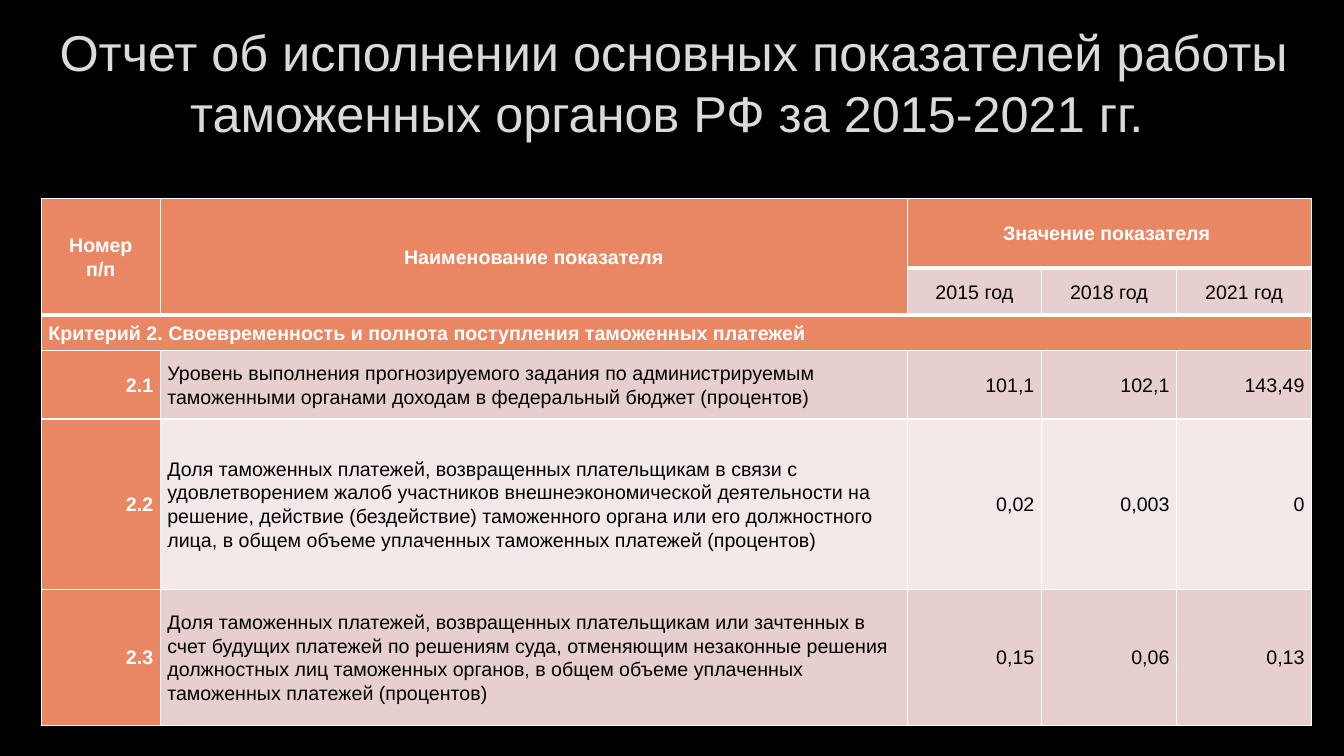
from lxml.etree import SubElement
from pptx import Presentation
from pptx.dml.color import RGBColor
from pptx.enum.text import MSO_ANCHOR as Anchor, MSO_AUTO_SIZE as AutoSize, PP_ALIGN as Align
from pptx.oxml import parse_xml
from pptx.oxml.ns import qn
from pptx.util import Inches, Pt

TITLE = "Отчет об исполнении основных показателей работы таможенных органов РФ за 2015-2021 гг. "
ROWS = [
    ["Номер\nп/п", "Наименование показателя", "Значение показателя ", "", ""],
    ["", "", "2015 год", "2018 год", "2021 год"],
    ["Критерий 2. Своевременность и полнота поступления таможенных платежей", "", "", "", ""],
    ["2.1", "Уровень выполнения прогнозируемого задания по администрируемым таможенными "
     "органами доходам в федеральный бюджет (процентов)", "101,1", "102,1", "143,49"],
    ["2.2", "Доля таможенных платежей, возвращенных плательщикам в связи с удовлетворением жалоб "
     "участников внешнеэкономической деятельности на решение, действие (бездействие) таможенного "
     "органа или его должностного лица, в общем объеме уплаченных таможенных платежей (процентов)",
     "0,02", "0,003", "0"],
    ["2.3", "Доля таможенных платежей, возвращенных плательщикам или зачтенных в счет будущих "
     "платежей по решениям суда, отменяющим незаконные решения должностных лиц таможенных органов, "
     "в общем объеме уплаченных таможенных платежей (процентов)", "0,15", "0,06", "0,13"],
]
MERGES = [((0, 0), (1, 0)), ((0, 1), (1, 1)), ((0, 2), (0, 4)), ((2, 0), (2, 4))]
COLUMN_WIDTHS = [1.18, 7.41, 1.33, 1.34, 1.34]
ROW_HEIGHTS = [0.69, 0.36, 0.35, 0.68, 1.69, 1.35]
HEADER_ROWS = 2
CRITERION_ROW = 2
FONT = "Arial"
ACCENT, DARK_BAND, LIGHT_BAND = "E98764", "E7CFCD", "F3E9E8"
WHITE, BLACK = "FFFFFF", "000000"


def paint(fill, color):
    fill.solid()
    fill.fore_color.rgb = RGBColor.from_string(color)


def format_font(font, size, color, bold=False):
    font.name, font.size, font.bold = FONT, Pt(size), bold
    paint(font.fill, color)


def outline_text(run):
    run.font.fill
    run._r.get_or_add_rPr().insert(0, parse_xml(
        '<a:ln xmlns:a="http://schemas.openxmlformats.org/drawingml/2006/main" w="9525">'
        '<a:solidFill><a:srgbClr val="404040"><a:alpha val="10000"/></a:srgbClr></a:solidFill></a:ln>'))


def add_borders(cell, row):
    properties = cell._tc.get_or_add_tcPr()
    widths = {"lnL": 1, "lnR": 1,
              "lnT": 3 if 0 < row <= HEADER_ROWS else 1,
              "lnB": 3 if row < HEADER_ROWS else 1}
    for position, (edge, width) in enumerate(widths.items()):
        line = SubElement(properties, qn("a:" + edge), w=str(Pt(width)))
        fill = SubElement(line, qn("a:solidFill"))
        SubElement(fill, qn("a:srgbClr"), val=WHITE)
        properties.insert(position, line)


def alignment(row, column):
    if row < HEADER_ROWS:
        return Align.CENTER
    return Align.LEFT if row == CRITERION_ROW or column == 1 else Align.RIGHT


def format_cell(cell, row, column, text):
    accented = row in (0, CRITERION_ROW) or column == 0 or (row < HEADER_ROWS and column == 1)
    cell.text = text
    cell.vertical_anchor = Anchor.MIDDLE
    cell.margin_left = cell.margin_right = Inches(0.07)
    cell.margin_top = cell.margin_bottom = 0
    add_borders(cell, row)
    paint(cell.fill, ACCENT if accented else DARK_BAND if row % 2 else LIGHT_BAND)
    for paragraph in cell.text_frame.paragraphs:
        paragraph.alignment = alignment(row, column)
        paragraph.line_spacing = 1.07
        for run in paragraph.runs:
            format_font(run.font, 14, WHITE if accented else BLACK, accented)


def add_title(slide):
    title = slide.shapes.title
    title.left, title.top, title.width, title.height = map(Inches, (0.11, 0.28, 13.15, 1.06))
    frame = title.text_frame
    frame.text = TITLE
    frame.word_wrap = True
    frame.auto_size = AutoSize.NONE
    frame.vertical_anchor = Anchor.MIDDLE
    paragraph = frame.paragraphs[0]
    paragraph.alignment = Align.CENTER
    format_font(paragraph.runs[0].font, 36, "DADADA")
    outline_text(paragraph.runs[0])


def add_indicators(slide):
    table = slide.shapes.add_table(
        len(ROWS), len(COLUMN_WIDTHS), Inches(0.41), Inches(1.97),
        Inches(sum(COLUMN_WIDTHS)), Inches(sum(ROW_HEIGHTS))).table
    table.first_row = table.horz_banding = False
    for column, width in zip(table.columns, COLUMN_WIDTHS):
        column.width = Inches(width)
    for row, height in zip(table.rows, ROW_HEIGHTS):
        row.height = Inches(height)
    for row, texts in enumerate(ROWS):
        for column, text in enumerate(texts):
            format_cell(table.cell(row, column), row, column, text)
    for first, last in MERGES:
        table.cell(*first).merge(table.cell(*last))


def main():
    presentation = Presentation()
    presentation.slide_width, presentation.slide_height = Inches(13.33), Inches(7.5)
    slide = presentation.slides.add_slide(presentation.slide_layouts[5])
    paint(slide.background.fill, BLACK)
    add_title(slide)
    add_indicators(slide)
    presentation.save("out.pptx")


if __name__ == "__main__":
    main()
